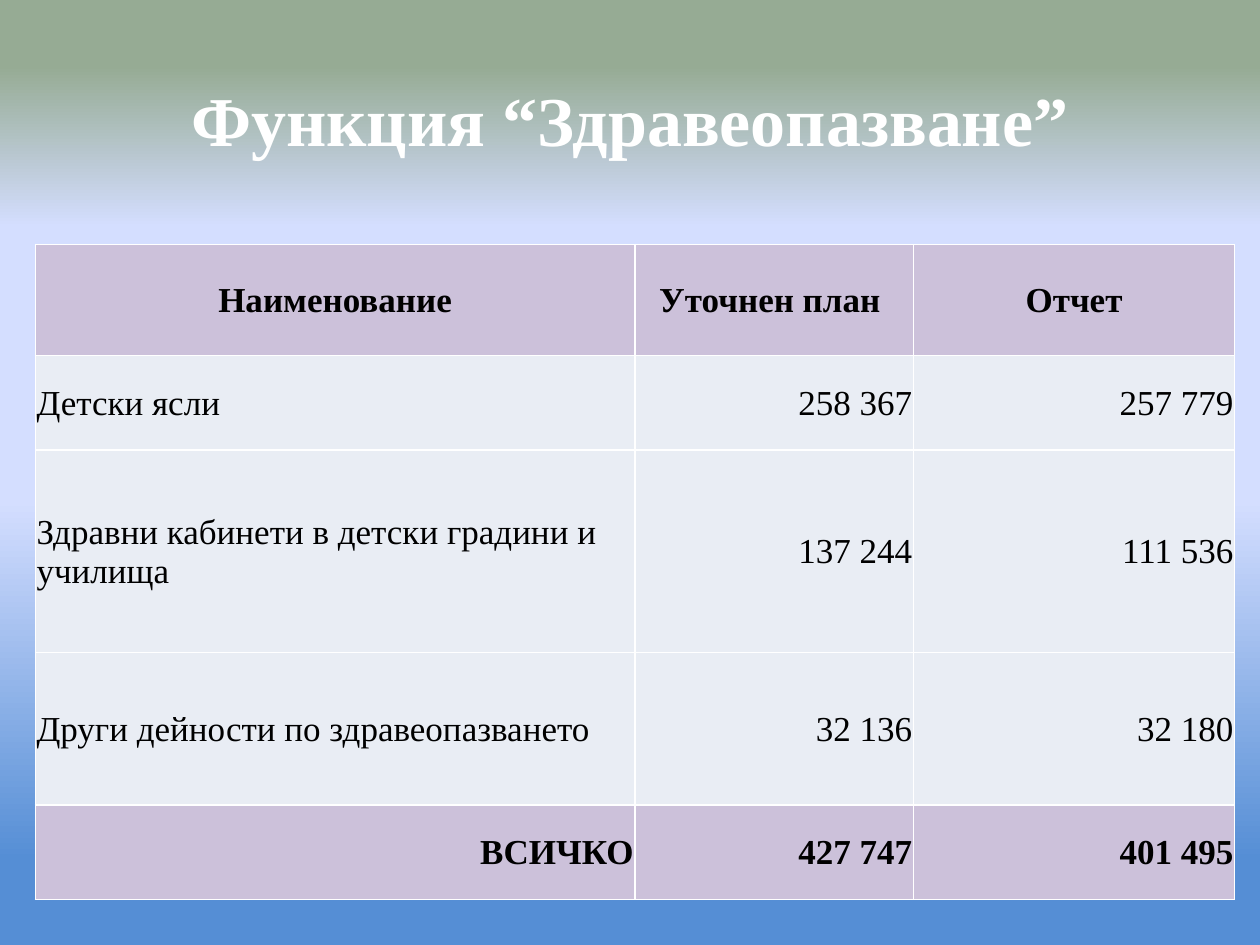
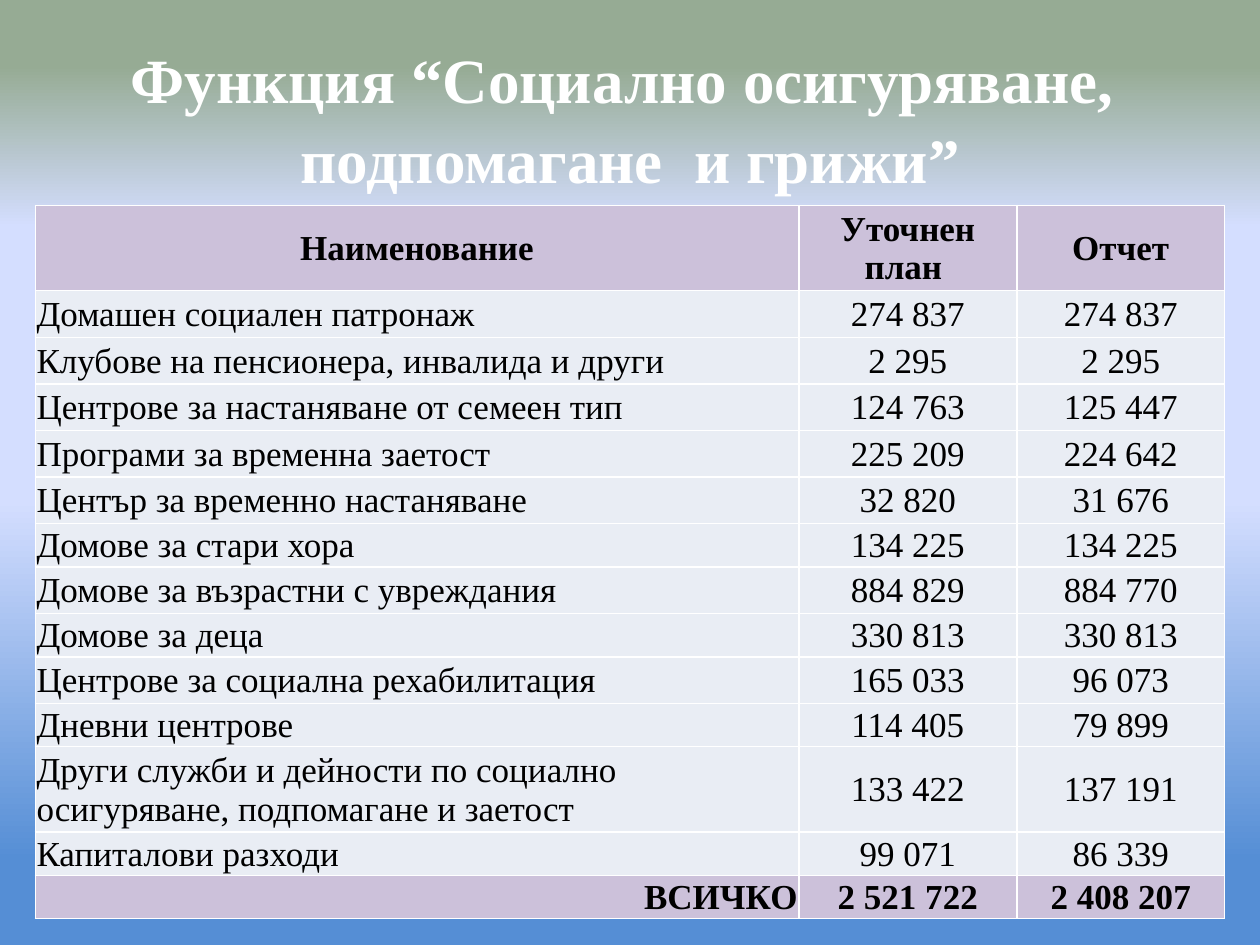
from lxml.etree import SubElement
from pptx import Presentation
from pptx.dml.color import RGBColor
from pptx.enum.text import MSO_ANCHOR, PP_ALIGN
from pptx.oxml.ns import qn
from pptx.util import Inches, Pt

WHITE, BLACK, LILAC, PALE = "FFFFFF", "000000", "CCC1DA", "E9EDF4"
SKY = [(9, "558ED5"), (47, "D4DEFF"), (76, "D4DEFF"), (93, "96AB94")]
HEADINGS = ("Наименование", "Уточнен план ", "Отчет")
CELL_FORMAT = {
    "vertical_anchor": MSO_ANCHOR.MIDDLE,
    "margin_left": Inches(0.01),
    "margin_right": Inches(0.01),
    "margin_top": Inches(0.01),
    "margin_bottom": Inches(0),
}
PLAIN_TABLE = {"first_row": False, "horz_banding": False}

budgets = [
    {
        "title": "Функция “Здравеопазване”",
        "title_size": 40,
        "place": (0.28, 1.94, 9.53, 5.2),
        "columns": (4.76, 2.21, 2.55),
        "heights": (0.88, 0.75, 1.61, 1.21, 0.75),
        "amount_align": PP_ALIGN.RIGHT,
        "entries": [
            ("Детски ясли", "258 367", "257 779"),
            ("Здравни кабинети в детски градини и училища", "137 244", "111 536"),
            ("Други дейности по здравеопазването", "32 136", "32 180"),
            ("ВСИЧКО", "427 747", "401 495"),
        ],
    },
    {
        "title": "Функция “Социално осигуряване,  подпомагане  и грижи”",
        "title_size": 36,
        "place": (0.28, 1.63, 9.45, 5.64),
        "columns": (6.06, 1.73, 1.65),
        "heights": (0.66, *[0.37] * 5, *[0.33, 0.37] * 2, 0.33, 0.66, 0.33, 0.33),
        "amount_align": PP_ALIGN.CENTER,
        "entries": [
            ("Домашен социален патронаж", "274 837", "274 837"),
            ("Клубове на пенсионера, инвалида и други", "2 295", "2 295"),
            ("Центрове за настаняване от семеен тип", "124 763", "125 447"),
            ("Програми за временна заетост", "225 209", "224 642"),
            ("Център за временно настаняване", "32 820", "31 676"),
            ("Домове за стари хора", "134 225", "134 225"),
            ("Домове за възрастни с увреждания", "884 829", "884 770"),
            ("Домове за деца", "330 813", "330 813"),
            ("Центрове за социална рехабилитация", "165 033", "96 073"),
            ("Дневни центрове", "114 405", "79 899"),
            ("Други служби и дейности по социално осигуряване, подпомагане и заетост",
             "133 422", "137 191"),
            ("Капиталови разходи", "99 071", "86 339"),
            ("ВСИЧКО", "2 521 722", "2 408 207"),
        ],
    },
]


def color(value):
    return RGBColor.from_string(value)


def write(frame, text, align, size, ink, bold):
    paragraph = frame.paragraphs[0]
    paragraph.alignment = align
    run = paragraph.add_run()
    run.text = text
    font_format = {"name": "Times New Roman", "size": Pt(size), "bold": bold}
    for key, value in font_format.items():
        setattr(run.font, key, value)
    run.font.color.rgb = color(ink)
    return paragraph


deck = Presentation()
deck.slide_width, deck.slide_height = Inches(10), Inches(7.5)

for budget in budgets:
    slide = deck.slides.add_slide(deck.slide_layouts[6])
    backdrop = slide.background.fill
    backdrop.gradient()
    backdrop.gradient_angle = 90
    stops = slide.element.find(".//" + qn("a:gsLst"))
    for stop in list(stops):
        stops.remove(stop)
    for percent, shade in SKY:
        stop = SubElement(stops, qn("a:gs"), pos=str(percent * 1000))
        SubElement(stop, qn("a:srgbClr"), val=shade)

    title = slide.shapes.add_textbox(Inches(0.5), Inches(0.3), Inches(9), Inches(1.25)).text_frame
    title.word_wrap = True
    title.vertical_anchor = MSO_ANCHOR.MIDDLE
    heading = write(title, budget["title"], PP_ALIGN.CENTER, budget["title_size"], WHITE, True)
    heading.line_spacing = 1.05

    entries = [HEADINGS, *budget["entries"]]
    last = len(entries) - 1
    place = [Inches(length) for length in budget["place"]]
    spending = slide.shapes.add_table(len(entries), len(HEADINGS), *place).table
    for key, value in PLAIN_TABLE.items():
        setattr(spending, key, value)
    for column, width in zip(spending.columns, budget["columns"]):
        column.width = Inches(width)
    for row, height in zip(spending.rows, budget["heights"]):
        row.height = Inches(height)

    for row_number, entry in enumerate(entries):
        emphasized = row_number in (0, last)
        for column_number, text in enumerate(entry):
            cell = spending.cell(row_number, column_number)
            for key, value in CELL_FORMAT.items():
                setattr(cell, key, value)
            if row_number == 0:
                align = PP_ALIGN.CENTER
            elif column_number:
                align = budget["amount_align"]
            else:
                align = PP_ALIGN.RIGHT if row_number == last else PP_ALIGN.LEFT
            write(cell.text_frame, text, align, 20, BLACK, emphasized)
            properties = cell._tc.get_or_add_tcPr()
            for side in ("a:lnL", "a:lnR", "a:lnT", "a:lnB"):
                border = SubElement(properties, qn(side), w=str(Pt(1)))
                SubElement(SubElement(border, qn("a:solidFill")), qn("a:srgbClr"), val=WHITE)
            cell.fill.solid()
            cell.fill.fore_color.rgb = color(LILAC if emphasized else PALE)

deck.save("out.pptx")
